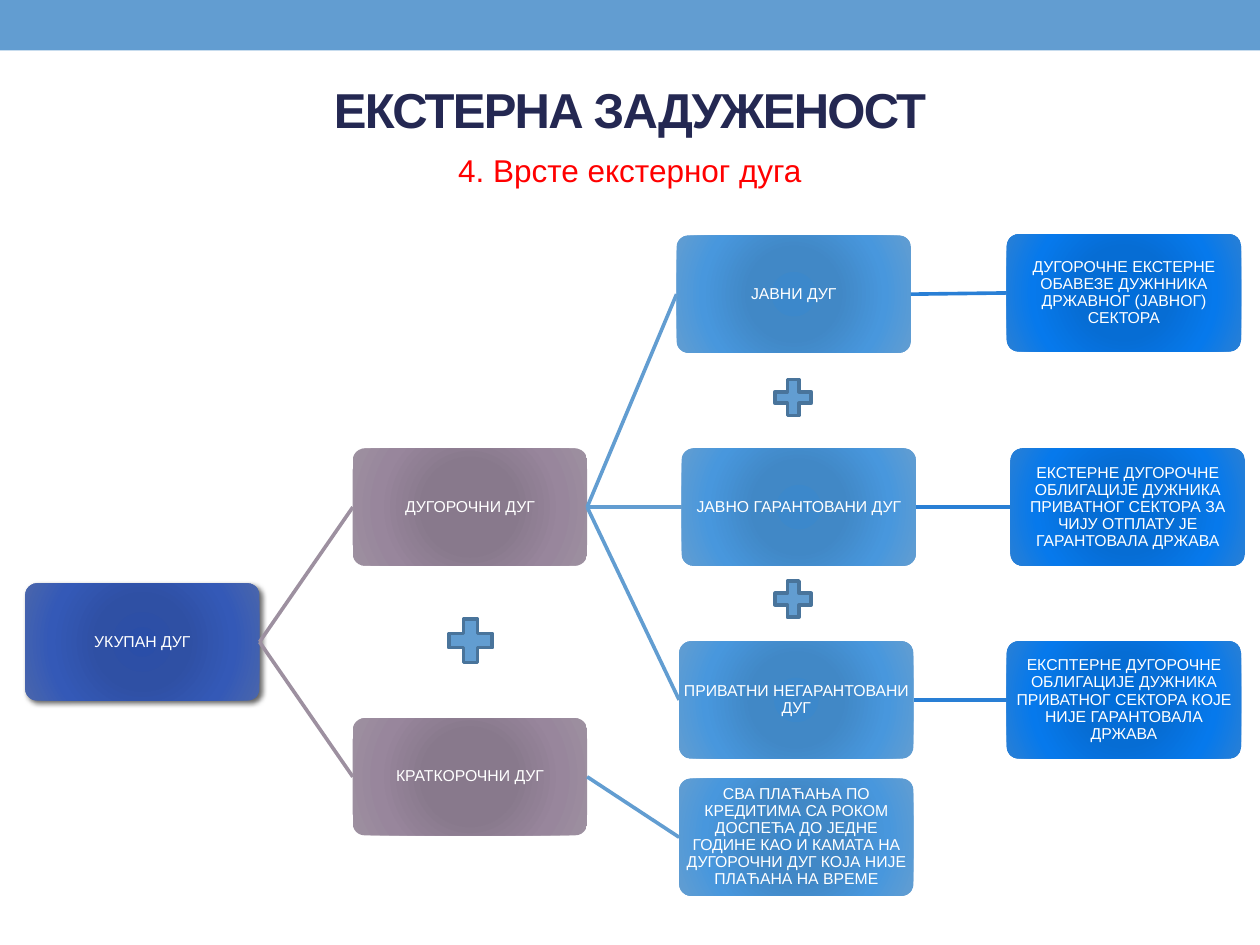
from lxml import etree
from pptx import Presentation
from pptx.dml.color import RGBColor
from pptx.enum import shapes, text
from pptx.oxml import ns
from pptx.util import Inches, Pt

FONT = "Arial"
COLORS = {
    "band": "629DD1", "title": "242852", "subtitle": "FF0000", "white": "FFFFFF",
    "plus_line": "49749B", "shadow": "000000",
    "term_line": "9D90A0", "kind_line": "629DD1", "detail_line": "297FD5",
}
# Radial gradient of each level, centre to edge
GRADIENTS = {
    "total": ["2A4EA8", "2F50A4", "3459B7", "4A66AC"],
    "term": ["89788C", "88798C", "98869C", "9D90A0"],
    "kind": ["3C88CB", "4188C6", "4897DD", "629DD1"],
    "detail": ["006DDA", "066DD4", "0679EC", "297FD5"],
}
STOPS = [0, 34, 70, 100]
BOX_W, BOX_H = 1.86, 0.93

# name: level, left, top, wording
BOXES = {
    "total": ("total", 0.2, 4.63, "УКУПАН ДУГ"),
    "long": ("term", 2.8, 3.56, "ДУГОРОЧНИ ДУГ"),
    "short": ("term", 2.8, 5.7, "КРАТКОРОЧНИ ДУГ"),
    "public": ("kind", 5.37, 1.87, "ЈАВНИ ДУГ"),
    "guaranteed": ("kind", 5.41, 3.56, "ЈАВНО ГАРАНТОВАНИ ДУГ"),
    "private": ("kind", 5.39, 5.09, "ПРИВАТНИ НЕГАРАНТОВАНИ ДУГ"),
    "short_detail": ("kind", 5.39, 6.18,
                     "СВА ПЛАЋАЊА ПО КРЕДИТИМА СА РОКОМ ДОСПЕЋА ДО ЈЕДНЕ ГОДИНЕ "
                     "КАО И КАМАТА НА ДУГОРОЧНИ ДУГ КОЈА НИЈЕ ПЛАЋАНА НА ВРЕМЕ"),
    "public_detail": ("detail", 7.99, 1.86,
                      "ДУГОРОЧНЕ ЕКСТЕРНЕ ОБАВЕЗЕ ДУЖННИКА ДРЖАВНОГ (ЈАВНОГ) СЕКТОРА"),
    "guaranteed_detail": ("detail", 8.02, 3.56,
                          "ЕКСТЕРНЕ ДУГОРОЧНЕ ОБЛИГАЦИЈЕ ДУЖНИКА ПРИВАТНОГ СЕКТОРА "
                          "ЗА ЧИЈУ ОТПЛАТУ ЈЕ ГАРАНТОВАЛА ДРЖАВА"),
    "private_detail": ("detail", 7.99, 5.09,
                       "ЕКСПТЕРНЕ ДУГОРОЧНЕ ОБЛИГАЦИЈЕ ДУЖНИКА ПРИВАТНОГ СЕКТОРА "
                       "КОЈЕ НИЈЕ ГАРАНТОВАЛА ДРЖАВА"),
}
LINKS = [
    ("total", "long"), ("total", "short"),
    ("long", "public"), ("long", "guaranteed"), ("long", "private"),
    ("short", "short_detail"), ("public", "public_detail"),
    ("guaranteed", "guaranteed_detail"), ("private", "private_detail"),
]
PLUSES = [(3.5, 4.85, 0.47), (6.1, 2.96, 0.39), (6.1, 4.56, 0.39)]  # left, top, size


def rgb(name):
    return RGBColor.from_string(COLORS[name])


def add_xml(parent, tag, **attrs):
    return etree.SubElement(parent, ns.qn(tag), {k: str(v) for k, v in attrs.items()})


def write(tf, wording, size, color, bold=False):
    tf.word_wrap = True
    p = tf.paragraphs[0]
    p.text = wording
    p.alignment = text.PP_ALIGN.CENTER
    r = p.runs[0]
    r.font.name, r.font.size, r.font.bold = FONT, Pt(size), bold
    r.font.color.rgb = rgb(color)
    return p


def add_text(s, x, y, w, h, wording, size, color, bold=False):
    sp = s.shapes.add_textbox(Inches(x), Inches(y), Inches(w), Inches(h))
    write(sp.text_frame, wording, size, color, bold)
    return sp


def add_shape(s, kind, x, y, w, h):
    sp = s.shapes.add_shape(kind, Inches(x), Inches(y), Inches(w), Inches(h))
    sp.shadow.inherit = False
    sp.line.fill.background()
    return sp


def fill_radial(sp, stops):
    sp.fill.gradient()
    grad = sp._element.spPr.find(ns.qn("a:gradFill"))
    for child in list(grad):
        grad.remove(child)
    stop_list = add_xml(grad, "a:gsLst")
    for pos, color in zip(STOPS, stops):
        add_xml(add_xml(stop_list, "a:gs", pos=pos * 1000), "a:srgbClr", val=color)
    circle = add_xml(grad, "a:path", path="circle")
    add_xml(circle, "a:fillToRect", l=100000, t=100000, r=100000, b=100000)


def add_drop_shadow(sp):
    effects = sp._element.spPr.find(ns.qn("a:effectLst"))
    shadow = add_xml(effects, "a:outerShdw", blurRad=Pt(3), dist=Pt(2),
                     dir=45 * 60000, rotWithShape=0)
    add_xml(add_xml(shadow, "a:srgbClr", val=COLORS["shadow"]), "a:alpha", val=60000)


def add_box(s, level, x, y, wording):
    sp = add_shape(s, shapes.MSO_SHAPE.ROUNDED_RECTANGLE, x, y, BOX_W, BOX_H)
    sp.adjustments[0] = 0.1
    fill_radial(sp, GRADIENTS[level])
    tf = sp.text_frame
    tf.margin_left = tf.margin_right = tf.margin_top = tf.margin_bottom = Inches(0.01)
    tf.vertical_anchor = text.MSO_ANCHOR.MIDDLE
    write(tf, wording, 9, "white").line_spacing = 0.9
    return sp


def add_link(s, start, end, color):
    line = s.shapes.add_connector(shapes.MSO_CONNECTOR.STRAIGHT, 0, 0, 0, 0)
    line.begin_connect(start, 3)
    line.end_connect(end, 1)
    line.line.color.rgb = rgb(color)
    line.line.width = Pt(2.08)
    add_xml(line._element.spPr, "a:effectLst")


def add_plus(s, x, y, size):
    sp = add_shape(s, shapes.MSO_SHAPE.MATH_PLUS, x, y, size, size)
    sp.fill.solid()
    sp.fill.fore_color.rgb = rgb("band")
    sp.line.color.rgb = rgb("plus_line")
    sp.line.width = Pt(2.08)


def main():
    prs = Presentation()
    prs.slide_width, prs.slide_height = Inches(10), Inches(7.5)
    s = prs.slides.add_slide(prs.slide_layouts[6])

    # Top band and headings
    band = add_shape(s, shapes.MSO_SHAPE.RECTANGLE, 0, 0, 10, 0.4)
    band.fill.solid()
    band.fill.fore_color.rgb = rgb("band")
    title = add_text(s, 0.5, 0.58, 9, 0.57, "ЕКСТЕРНА ЗАДУЖЕНОСТ", 28, "title", True)
    title.text_frame.vertical_anchor = text.MSO_ANCHOR.MIDDLE
    title.text_frame.paragraphs[0].runs[0].font._element.set("spc", "-100")
    add_text(s, 0.5, 1.15, 9, 0.5, "4. Врсте екстерног дуга", 18, "subtitle")

    # Debt tree
    boxes = {name: add_box(s, *box) for name, box in BOXES.items()}
    add_drop_shadow(boxes["total"])
    for start, end in LINKS:
        add_link(s, boxes[start], boxes[end], BOXES[end][0] + "_line")

    # Plus signs between the parts of a sum
    for plus in PLUSES:
        add_plus(s, *plus)

    prs.save("out.pptx")


if __name__ == "__main__":
    main()
